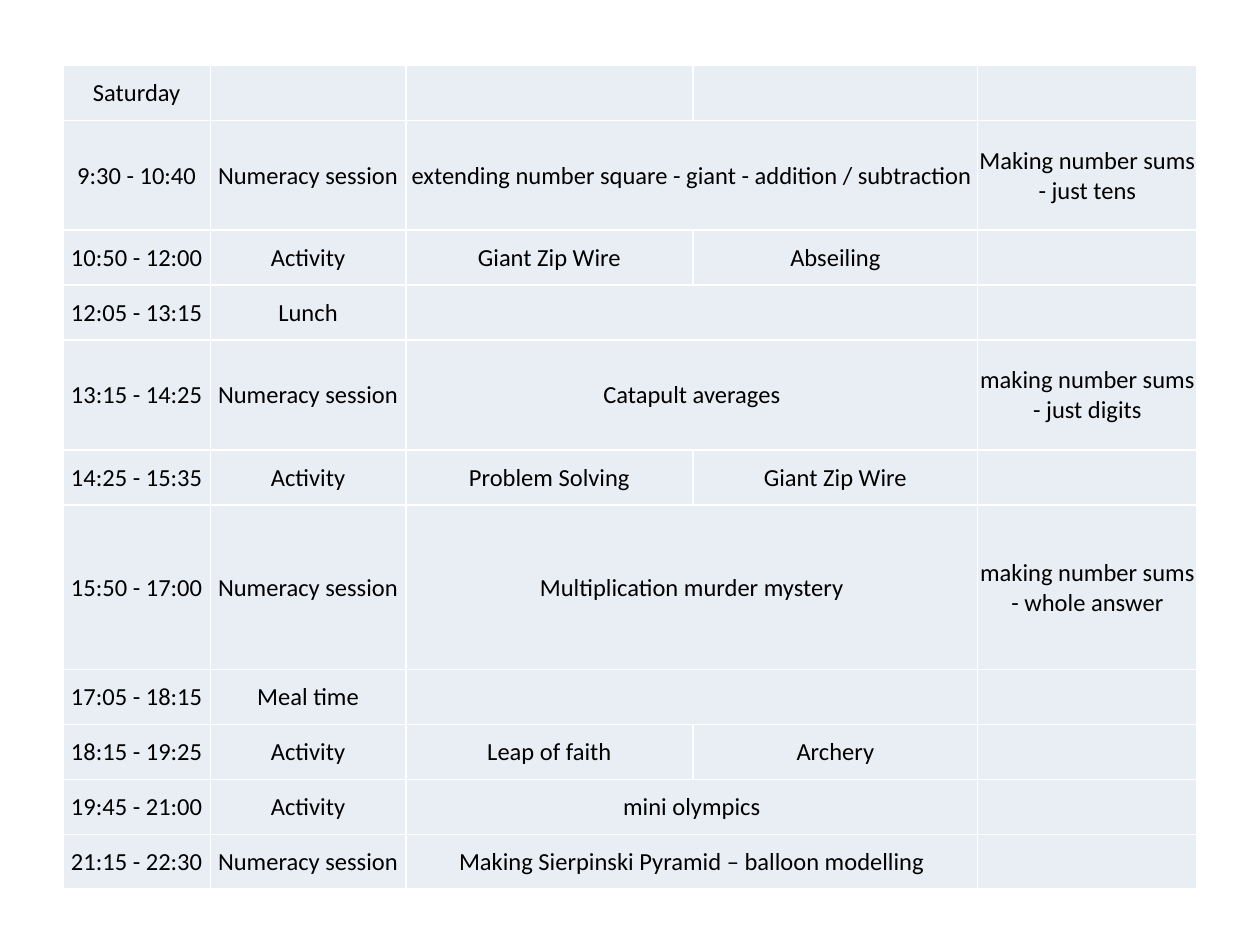
from dataclasses import dataclass

from lxml.etree import SubElement
from pptx import Presentation
from pptx.dml.color import RGBColor
from pptx.enum.text import MSO_ANCHOR as Anchor, PP_ALIGN as Align
from pptx.oxml.ns import qn
from pptx.table import Table, _Cell as Cell
from pptx.util import Cm, Pt

FONT = "Calibri"
TEXT = "000000"
CELL_FILL = "E9EDF4"
BORDER = "FFFFFF"
COLUMN_WIDTHS = (2.97, 3.94, 5.79, 5.74, 4.42)
TABLE_HEIGHT = 16.61


@dataclass
class Session:
    time: str
    kind: str = ""
    first: str = ""
    second: str = ""
    extra: str = ""
    units: int = 1
    shared: bool = False


SESSIONS = [
    Session("Saturday"),
    Session("9:30 - 10:40", "Numeracy session",
            "extending number square - giant - addition / subtraction",
            extra="Making number sums - just tens", units=2, shared=True),
    Session("10:50 - 12:00", "Activity", "Giant Zip Wire", "Abseiling"),
    Session("12:05 - 13:15", "Lunch", shared=True),
    Session("13:15 - 14:25", "Numeracy session", "Catapult averages",
            extra="making number sums - just digits", units=2, shared=True),
    Session("14:25 - 15:35", "Activity", "Problem Solving", "Giant Zip Wire"),
    Session("15:50 - 17:00", "Numeracy session", "Multiplication murder mystery",
            extra="making number sums - whole answer", units=3, shared=True),
    Session("17:05 - 18:15", "Meal time", shared=True),
    Session("18:15 - 19:25", "Activity", "Leap of faith", "Archery"),
    Session("19:45 - 21:00", "Activity", "mini olympics", shared=True),
    Session("21:15 - 22:30", "Numeracy session",
            "Making Sierpinski Pyramid – balloon modelling", shared=True),
]


def colour(value: str) -> RGBColor:
    return RGBColor.from_string(value)


def add_borders(cell: Cell) -> None:
    properties = cell._tc.get_or_add_tcPr()
    for position, side in enumerate(("lnL", "lnR", "lnT", "lnB")):
        line = SubElement(properties, qn(f"a:{side}"), w=str(Pt(1)))
        fill = SubElement(line, qn("a:solidFill"))
        SubElement(fill, qn("a:srgbClr"), val=str(colour(BORDER)))
        properties.insert(position, line)


def fill_cell(cell: Cell, text: str) -> None:
    cell.text = text
    cell.vertical_anchor = Anchor.MIDDLE
    cell.margin_left = cell.margin_right = cell.margin_top = Cm(0.02)
    cell.margin_bottom = Cm(0)
    cell.fill.solid()
    cell.fill.fore_color.rgb = colour(CELL_FILL)
    add_borders(cell)
    para = cell.text_frame.paragraphs[0]
    para.alignment = Align.CENTER
    para.font.name = FONT
    para.font.size = Pt(14)
    para.font.color.rgb = colour(TEXT)


def fill_session(table: Table, row: int, session: Session, unit: int) -> None:
    table.rows[row].height = session.units * unit
    texts = (session.time, session.kind, session.first, session.second, session.extra)
    for column, text in enumerate(texts):
        fill_cell(table.cell(row, column), text)
    if session.shared:
        table.cell(row, 2).merge(table.cell(row, 3))


def main() -> None:
    deck = Presentation()
    deck.slide_width, deck.slide_height = Cm(25.4), Cm(19.05)
    page = deck.slides.add_slide(deck.slide_layouts[6])
    table = page.shapes.add_table(
        len(SESSIONS), len(COLUMN_WIDTHS),
        Cm(1.27), Cm(1.32), Cm(sum(COLUMN_WIDTHS)), Cm(TABLE_HEIGHT),
    ).table
    table.first_row = table.horz_banding = False
    for column, width in zip(table.columns, COLUMN_WIDTHS):
        column.width = Cm(width)
    unit = Cm(TABLE_HEIGHT) // sum(session.units for session in SESSIONS)
    for row, session in enumerate(SESSIONS):
        fill_session(table, row, session, unit)
    deck.save("out.pptx")


if __name__ == "__main__":
    main()
